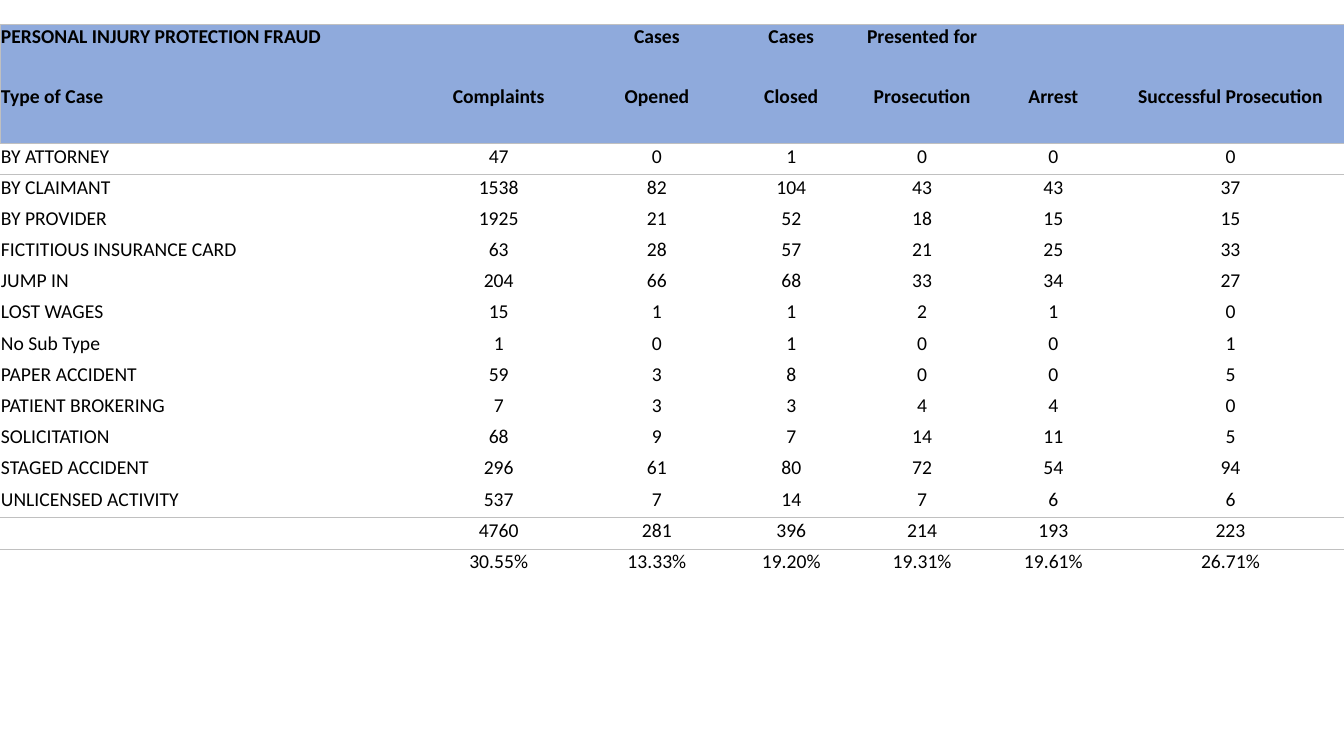
from dataclasses import dataclass

from lxml import etree
from pptx import Presentation
from pptx.dml.color import RGBColor
from pptx.enum.text import MSO_ANCHOR, PP_ALIGN
from pptx.oxml.ns import qn
from pptx.util import Pt

LEFT, CENTER = PP_ALIGN.LEFT, PP_ALIGN.CENTER
TOP = MSO_ANCHOR.TOP
NO_STYLE_NO_GRID = "{2D5ABB26-0587-4C30-8999-92F81FD0307C}"


@dataclass(frozen=True)
class Theme:
    font: str = "Calibri"
    size: float = 14
    ink: str = "000000"
    header_fill: str = "8FAADC"
    rule: str = "C0C0C0"
    rule_width: float = 0.5
    inset: float = 0.7


THEME = Theme()

SLIDE_WIDTH, SLIDE_HEIGHT = 960, 540
COLUMN_WIDTHS = (294, 124.5, 101.5, 90.5, 96.5, 91, 162)
HEADER_HEIGHT, CASE_HEIGHT = 42.6, 22.3

HEADINGS = [
    ("PERSONAL INJURY PROTECTION FRAUD", "", "Cases", "Cases", "Presented for", "", ""),
    ("Type of Case", "Complaints", "Opened", "Closed", "Prosecution", "Arrest",
     "Successful Prosecution"),
]
CASES = [
    ("BY ATTORNEY", 47, 0, 1, 0, 0, 0),
    ("BY CLAIMANT", 1538, 82, 104, 43, 43, 37),
    ("BY PROVIDER", 1925, 21, 52, 18, 15, 15),
    ("FICTITIOUS INSURANCE CARD", 63, 28, 57, 21, 25, 33),
    ("JUMP IN", 204, 66, 68, 33, 34, 27),
    ("LOST WAGES", 15, 1, 1, 2, 1, 0),
    ("No Sub Type", 1, 0, 1, 0, 0, 1),
    ("PAPER ACCIDENT", 59, 3, 8, 0, 0, 5),
    ("PATIENT BROKERING", 7, 3, 3, 4, 4, 0),
    ("SOLICITATION", 68, 9, 7, 14, 11, 5),
    ("STAGED ACCIDENT", 296, 61, 80, 72, 54, 94),
    ("UNLICENSED ACTIVITY", 537, 7, 14, 7, 6, 6),
]
TOTALS = [
    ("", 4760, 281, 396, 214, 193, 223),
    ("", "30.55%", "13.33%", "19.20%", "19.31%", "19.61%", "26.71%"),
]


def write_cell(cell, content, alignment, bold):
    cell.margin_left = cell.margin_right = cell.margin_top = Pt(THEME.inset)
    cell.margin_bottom = 0
    cell.vertical_anchor = TOP
    paragraph = cell.text_frame.paragraphs[0]
    paragraph.alignment = alignment
    if content == "":
        # The end mark keeps an empty cell from stretching its row.
        etree.SubElement(paragraph._p, qn("a:endParaRPr"), sz=str(int(THEME.size * 100)))
        return
    run = paragraph.add_run()
    run.text = str(content)
    run.font.name = THEME.font
    run.font.size = Pt(THEME.size)
    run.font.bold = bold
    run.font.color.rgb = RGBColor.from_string(THEME.ink)


def rule_cell(cell, sides):
    """Draw the given sides (letters out of LRTB, in that order) of a cell."""
    properties = cell._tc.get_or_add_tcPr()
    for side in sides:
        line = etree.SubElement(properties, qn(f"a:ln{side}"), w=str(Pt(THEME.rule_width)))
        solid = etree.SubElement(line, qn("a:solidFill"))
        etree.SubElement(solid, qn("a:srgbClr"), val=THEME.rule)


def ruled_sides(row, column):
    """Outline the heading block and divide the cases from the totals."""
    first_case = len(HEADINGS)
    first_total = first_case + len(CASES)
    sides = ""
    if row < first_case:
        sides += "L" if column == 0 else ""
        sides += "R" if column == len(COLUMN_WIDTHS) - 1 else ""
    if row in (0, first_case, first_total):
        sides += "T"
    if row + 1 in (first_case, first_total):
        sides += "B"
    return sides


def add_fraud_table(slide, left, top, width):
    records = HEADINGS + CASES + TOTALS
    heights = [HEADER_HEIGHT] * len(HEADINGS) + [CASE_HEIGHT] * len(CASES + TOTALS)
    frame = slide.shapes.add_table(len(records), len(COLUMN_WIDTHS), Pt(left), Pt(top),
                                   Pt(width), Pt(sum(heights)))
    table = frame.table
    table.first_row = table.horz_banding = False
    table._tbl.tblPr.find(qn("a:tableStyleId")).text = NO_STYLE_NO_GRID
    for column, share in zip(table.columns, COLUMN_WIDTHS):
        column.width = Pt(width * share / sum(COLUMN_WIDTHS))
    for r, (record, height) in enumerate(zip(records, heights)):
        table.rows[r].height = Pt(height)
        is_heading = r < len(HEADINGS)
        for c, content in enumerate(record):
            cell = table.cell(r, c)
            write_cell(cell, content, CENTER if c else LEFT, is_heading)
            rule_cell(cell, ruled_sides(r, c))
            if is_heading:
                cell.fill.solid()
                cell.fill.fore_color.rgb = RGBColor.from_string(THEME.header_fill)
            else:
                cell.fill.background()


def main():
    presentation = Presentation()
    presentation.slide_width = Pt(SLIDE_WIDTH)
    presentation.slide_height = Pt(SLIDE_HEIGHT)
    slide = presentation.slides.add_slide(presentation.slide_layouts[6])
    add_fraud_table(slide, 0, 17.3, SLIDE_WIDTH)
    presentation.save("out.pptx")


if __name__ == "__main__":
    main()
